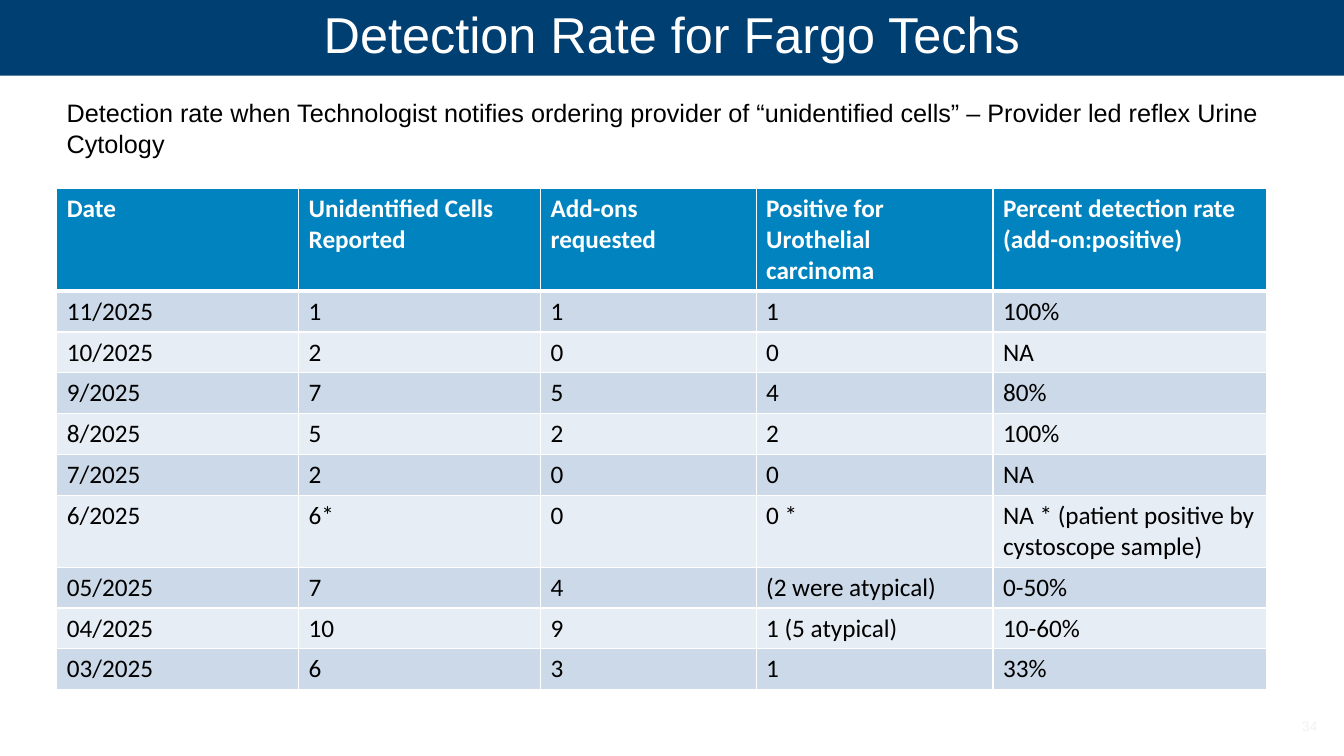
from lxml.etree import SubElement
from pptx import Presentation
from pptx.dml.color import RGBColor
from pptx.enum.shapes import MSO_SHAPE
from pptx.enum.text import MSO_ANCHOR, PP_ALIGN
from pptx.oxml.ns import qn
from pptx.util import Pt

TITLE = "Detection Rate for Fargo Techs"
INTRO = ("Detection rate when Technologist notifies ordering provider of "
         "“unidentified cells” – Provider led reflex Urine Cytology")
PAGE = "34"
ROWS = [
    ("Date", "Unidentified Cells Reported", "Add-ons requested",
     "Positive for Urothelial carcinoma", "Percent detection rate (add-on:positive)"),
    ("11/2025", "1", "1", "1", "100%"),
    ("10/2025", "2", "0", "0", "NA"),
    ("9/2025", "7", "5", "4", "80%"),
    ("8/2025", "5", "2", "2", "100%"),
    ("7/2025", "2", "0", "0", "NA"),
    ("6/2025", "6*", "0", "0 *", "NA * (patient positive by cystoscope sample)"),
    ("05/2025", "7", "4", "(2 were atypical)", "0-50%"),
    ("04/2025", "10", "9", "1 (5 atypical)", "10-60%"),
    ("03/2025", "6", "3", "1", "33%"),
]
COL_WIDTHS = (172.8, 172.8, 154, 169.2, 195.2)
ROW_HEIGHT = 29.2
TABLE_HEIGHT = 355.7
LEFT = 40.5

WHITE = RGBColor(0xFF, 0xFF, 0xFF)
BLACK = RGBColor(0, 0, 0)
NAVY = RGBColor(0x00, 0x3F, 0x72)
BLUE = RGBColor(0x00, 0x83, 0xBE)
BANDS = (RGBColor(0xE7, 0xED, 0xF4), RGBColor(0xCC, 0xD9, 0xE8))
PALE = RGBColor(0xF2, 0xF2, 0xF2)


def write(tf, text, size, color, font="Arial", bold=False, align=PP_ALIGN.LEFT):
    tf.word_wrap = True
    p = tf.paragraphs[0]
    p.text = text
    p.alignment = align
    p.font.name = font
    p.font.size = Pt(size)
    p.font.bold = bold
    p.font.color.rgb = color


def set_borders(cell, bottom):
    """White lines round a cell, placed ahead of its fill."""
    tc_pr = cell._tc.get_or_add_tcPr()
    for i, (side, width) in enumerate(zip("LRTB", (1, 1, 1, bottom))):
        ln = SubElement(tc_pr, qn(f"a:ln{side}"), w=str(Pt(width)))
        fill = SubElement(ln, qn("a:solidFill"))
        SubElement(fill, qn("a:srgbClr"), val=str(WHITE))
        tc_pr.insert(i, ln)


def add_text(s, box, *args, **kwargs):
    tb = s.shapes.add_textbox(*map(Pt, box))
    write(tb.text_frame, *args, **kwargs)


def add_rates(s):
    frame = s.shapes.add_table(len(ROWS), len(COL_WIDTHS), Pt(LEFT), Pt(134.8),
                               Pt(sum(COL_WIDTHS)), Pt(TABLE_HEIGHT))
    table = frame.table
    for column, width in zip(table.columns, COL_WIDTHS):
        column.width = Pt(width)
    for i, (row, texts) in enumerate(zip(table.rows, ROWS)):
        row.height = Pt(ROW_HEIGHT)
        header = i == 0
        for cell, text in zip(row.cells, texts):
            write(cell.text_frame, text, 18, WHITE if header else BLACK,
                  font="Calibri", bold=header)
            cell.fill.solid()
            cell.fill.fore_color.rgb = BLUE if header else BANDS[i % 2]
            set_borders(cell, 3 if header else 1)
    frame.height = Pt(TABLE_HEIGHT)


def main():
    prs = Presentation()
    prs.slide_width, prs.slide_height = Pt(960), Pt(540)
    s = prs.slides.add_slide(prs.slide_layouts[6])

    banner = s.shapes.add_shape(MSO_SHAPE.RECTANGLE, Pt(0), Pt(-5.8), Pt(960), Pt(59.8))
    banner.shadow.inherit = False
    banner.fill.solid()
    banner.fill.fore_color.rgb = NAVY
    banner.line.fill.background()
    banner.text_frame.vertical_anchor = MSO_ANCHOR.MIDDLE
    write(banner.text_frame, TITLE, 36, WHITE, align=PP_ALIGN.CENTER)

    add_rates(s)
    add_text(s, (LEFT, 66.2, 894.2, 51), INTRO, 18, BLACK)
    add_text(s, (900, 509, 48, 20), PAGE, 10, PALE, align=PP_ALIGN.RIGHT)
    prs.save("out.pptx")


if __name__ == "__main__":
    main()
